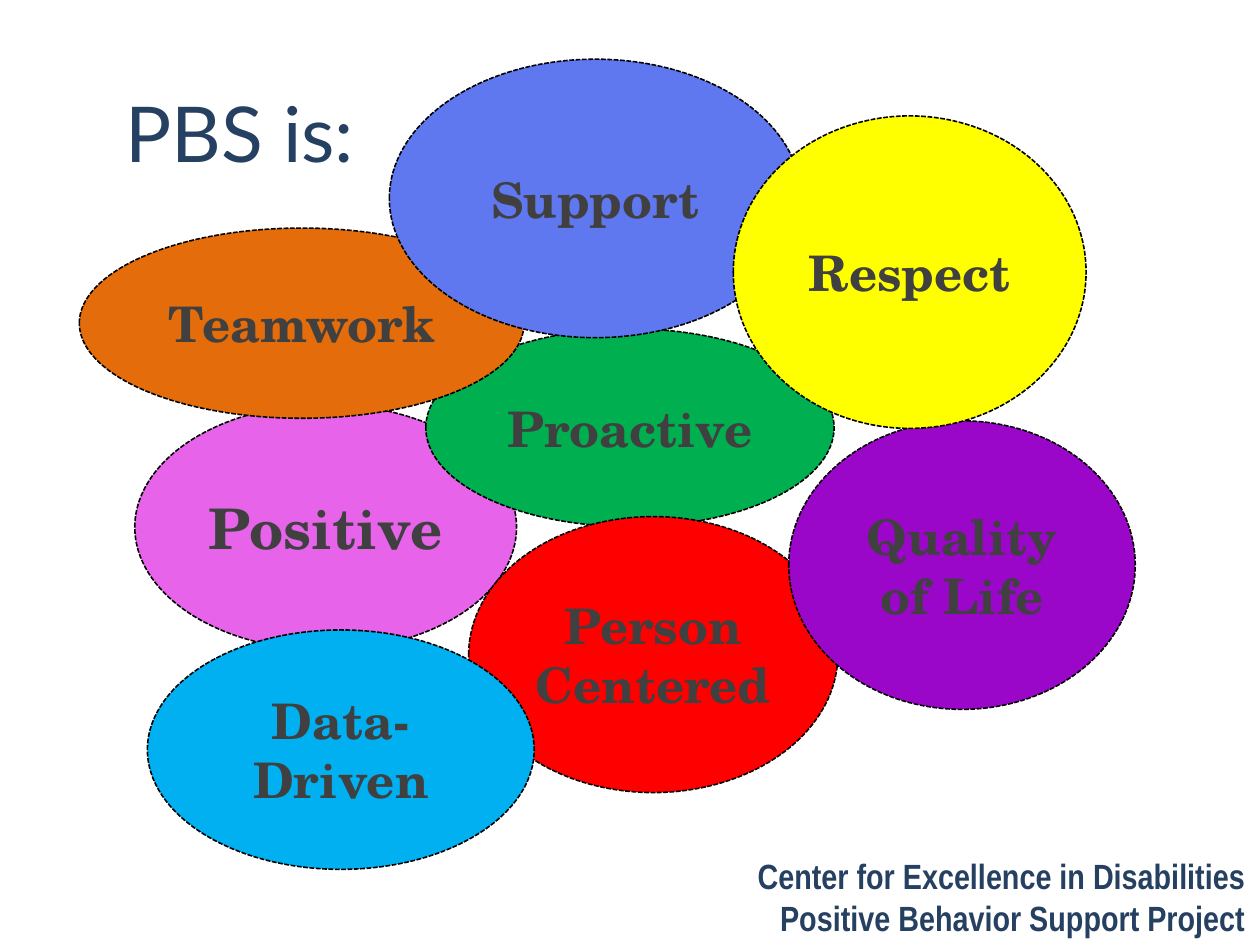
from dataclasses import dataclass

from pptx import Presentation
from pptx.dml.color import RGBColor
from pptx.enum.dml import MSO_LINE
from pptx.enum.shapes import MSO_SHAPE
from pptx.enum.text import MSO_ANCHOR, PP_ALIGN
from pptx.shapes.autoshape import Shape
from pptx.slide import Slide
from pptx.util import Inches, Pt

ELLIPSE = MSO_SHAPE.OVAL
DASHED = MSO_LINE.SQUARE_DOT
TOP, MIDDLE, BOTTOM = MSO_ANCHOR.TOP, MSO_ANCHOR.MIDDLE, MSO_ANCHOR.BOTTOM
CENTER, RIGHT = PP_ALIGN.CENTER, PP_ALIGN.RIGHT


@dataclass(frozen=True)
class TextStyle:
    font: str
    size: float
    color: str
    bold: bool
    align: PP_ALIGN
    anchor: MSO_ANCHOR


@dataclass(frozen=True)
class Theme:
    title: TextStyle = TextStyle("Lato", 44, "254061", False, CENTER, BOTTOM)
    value: TextStyle = TextStyle("TeX Gyre Schola", 28, "404040", True, CENTER, MIDDLE)
    key_value: TextStyle = TextStyle("TeX Gyre Schola", 32, "404040", True, CENTER, MIDDLE)
    footer: TextStyle = TextStyle("Arial Narrow", 20, "254061", True, RIGHT, TOP)
    outline: str = "000000"
    outline_width: float = 0.9


@dataclass(frozen=True)
class Area:
    left: float
    top: float
    width: float
    height: float

    def lengths(self) -> tuple[Inches, Inches, Inches, Inches]:
        return Inches(self.left), Inches(self.top), Inches(self.width), Inches(self.height)


@dataclass(frozen=True)
class Bubble:
    label: str
    area: Area
    fill: str
    style: TextStyle


THEME = Theme()

BUBBLES = [
    Bubble("Positive", Area(1.07, 3.21, 3.03, 1.95), "E764EA", THEME.key_value),
    Bubble("Proactive", Area(3.38, 2.61, 3.24, 1.57), "00B050", THEME.value),
    Bubble("Person Centered", Area(3.72, 4.1, 2.93, 2.19), "FF0000", THEME.value),
    Bubble("Teamwork", Area(0.63, 1.81, 3.53, 1.51), "E46C0A", THEME.value),
    Bubble("Data-Driven", Area(1.17, 5, 3.07, 1.9), "00B0F0", THEME.value),
    Bubble("Quality of Life", Area(6.26, 3.34, 2.75, 2.29), "9B07C9", THEME.value),
    Bubble("Support", Area(3.09, 0.47, 3.27, 2.21), "5F77EF", THEME.value),
    Bubble("Respect", Area(5.82, 0.92, 2.8, 2.48), "FFFF00", THEME.value),
]


def write_text(box: Shape, text: str, style: TextStyle) -> None:
    frame = box.text_frame
    frame.word_wrap = True
    frame.vertical_anchor = style.anchor
    para = frame.paragraphs[0]
    para.alignment = style.align
    span = para.add_run()
    span.text = text
    span.font.name = style.font
    span.font.size = Pt(style.size)
    span.font.bold = style.bold
    span.font.color.rgb = RGBColor.from_string(style.color)


def add_text(page: Slide, text: str, area: Area, style: TextStyle) -> None:
    write_text(page.shapes.add_textbox(*area.lengths()), text, style)


def add_bubble(page: Slide, bubble: Bubble) -> None:
    oval = page.shapes.add_shape(ELLIPSE, *bubble.area.lengths())
    oval.shadow.inherit = False
    oval.fill.solid()
    oval.fill.fore_color.rgb = RGBColor.from_string(bubble.fill)
    oval.line.color.rgb = RGBColor.from_string(THEME.outline)
    oval.line.width = Pt(THEME.outline_width)
    oval.line.dash_style = DASHED
    write_text(oval, bubble.label, bubble.style)


def main() -> None:
    deck = Presentation()
    deck.slide_width = Inches(10)
    deck.slide_height = Inches(7.5)
    page = deck.slides.add_slide(deck.slide_layouts[6])

    add_text(page, "PBS is:", Area(0.43, 0.19, 2.95, 1.27), THEME.title)
    for bubble in BUBBLES:
        add_bubble(page, bubble)
    add_text(
        page,
        "Center for Excellence in Disabilities Positive Behavior Support Project",
        Area(5.89, 6.73, 4.09, 0.77),
        THEME.footer,
    )
    deck.save("out.pptx")


if __name__ == "__main__":
    main()
